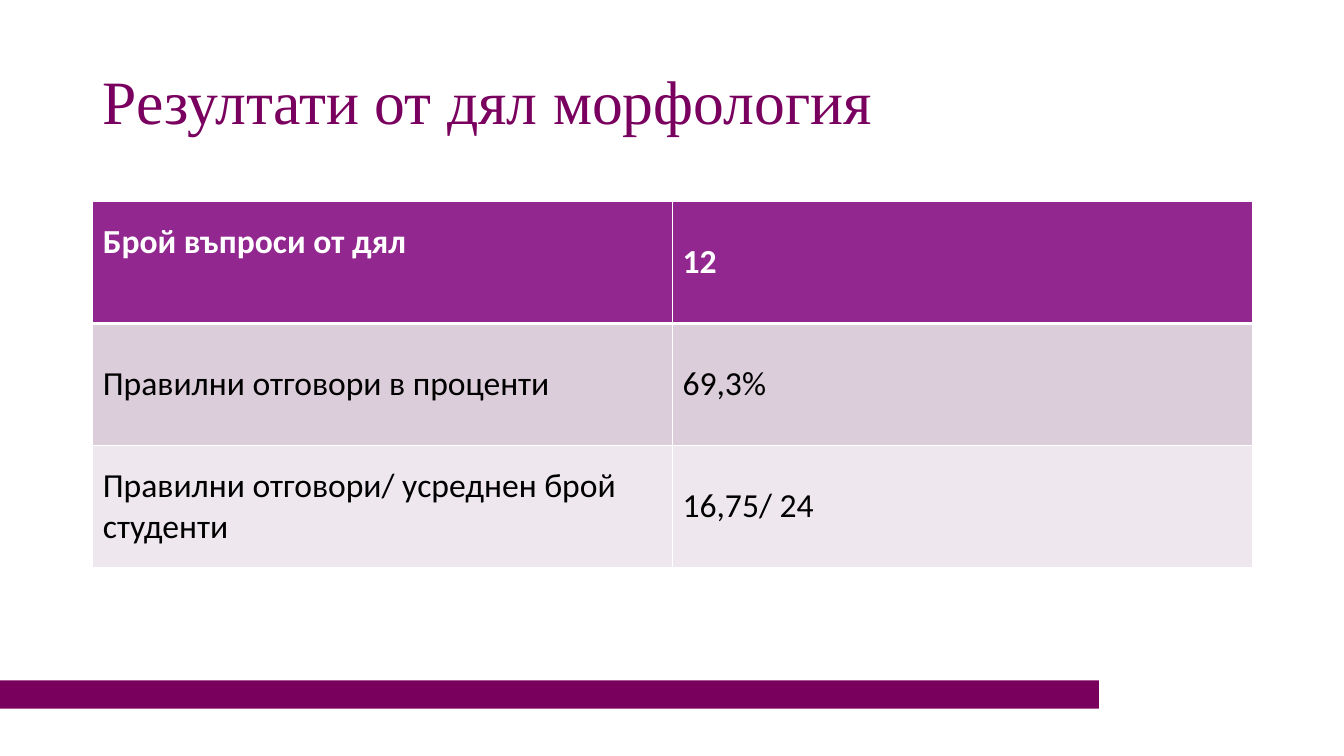
from pptx import Presentation
from pptx.dml.color import RGBColor
from pptx.enum.shapes import MSO_SHAPE
from pptx.enum.text import MSO_ANCHOR, PP_ALIGN
from pptx.oxml import parse_xml
from pptx.oxml.ns import nsdecls
from pptx.util import Inches, Pt

COLORS = {
    "bar": "7A005E",
    "title": "7A005F",
    "header": "92278F",
    "odd_row": "DCCDDB",
    "even_row": "EEE8EE",
    "white": "FFFFFF",
    "black": "000000",
}
ROWS = [
    ("Брой въпроси от дял", "12"),
    ("Правилни отговори в проценти", "69,3%"),
    ("Правилни отговори/ усреднен брой студенти", "16,75/ 24"),
]
ROW_FILLS = ["header", "odd_row", "even_row"]


def color(name):
    return RGBColor.from_string(COLORS[name])


def add_bar(page, left, top, width, height):
    bar = page.shapes.add_shape(
        MSO_SHAPE.RECTANGLE, Inches(left), Inches(top), Inches(width), Inches(height))
    bar.shadow.inherit = False
    bar.fill.solid()
    bar.fill.fore_color.rgb = color("bar")
    bar.line.fill.background()


def set_title(page, text, left, top, width, height):
    title = page.shapes.title
    title.left, title.top = Inches(left), Inches(top)
    title.width, title.height = Inches(width), Inches(height)
    frame = title.text_frame
    frame.text = text
    frame.word_wrap = True
    frame.vertical_anchor = MSO_ANCHOR.MIDDLE
    para = frame.paragraphs[0]
    para.alignment = PP_ALIGN.LEFT
    para.line_spacing = 0.9
    para.font.name = "Times New Roman"
    para.font.size = Pt(44)
    para.font.color.rgb = color("title")


def set_borders(cell, widths):
    """Draw white borders; widths maps a side (L, R, T, B) to points."""
    properties = cell._tc.get_or_add_tcPr()
    for index, (side, width) in enumerate(widths.items()):
        properties.insert(index, parse_xml(
            f'<a:ln{side} {nsdecls("a")} w="{Pt(width)}"><a:solidFill>'
            f'<a:srgbClr val="{COLORS["white"]}"/></a:solidFill></a:ln{side}>'))


def add_results(page, left, top, width, height):
    table = page.shapes.add_table(
        len(ROWS), len(ROWS[0]),
        Inches(left), Inches(top), Inches(width), Inches(height)).table
    for row, texts in enumerate(ROWS):
        header = row == 0
        for column, text in enumerate(texts):
            cell = table.cell(row, column)
            cell.text = text
            cell.vertical_anchor = MSO_ANCHOR.MIDDLE
            cell.fill.solid()
            cell.fill.fore_color.rgb = color(ROW_FILLS[row])
            set_borders(cell, {"L": 1, "R": 1, "T": 3 if row == 1 else 1,
                               "B": 3 if header else 1})
            font = cell.text_frame.paragraphs[0].font
            font.name = "Calibri"
            font.size = Pt(24)
            font.bold = header
            font.color.rgb = color("white" if header else "black")
    # The first heading sits above the middle of its cell
    table.cell(0, 0).margin_bottom = Inches(0.45)


def main():
    deck = Presentation()
    deck.slide_width, deck.slide_height = Inches(13.33), Inches(7.5)
    page = deck.slides.add_slide(deck.slide_layouts[5])

    # Bottom bar, title and results table
    add_bar(page, 0, 6.75, 10.9, 0.28)
    set_title(page, "Резултати от дял морфология", 0.92, 0.31, 11.5, 1.45)
    add_results(page, 0.92, 2, 11.5, 3.63)

    deck.save("out.pptx")


if __name__ == "__main__":
    main()
